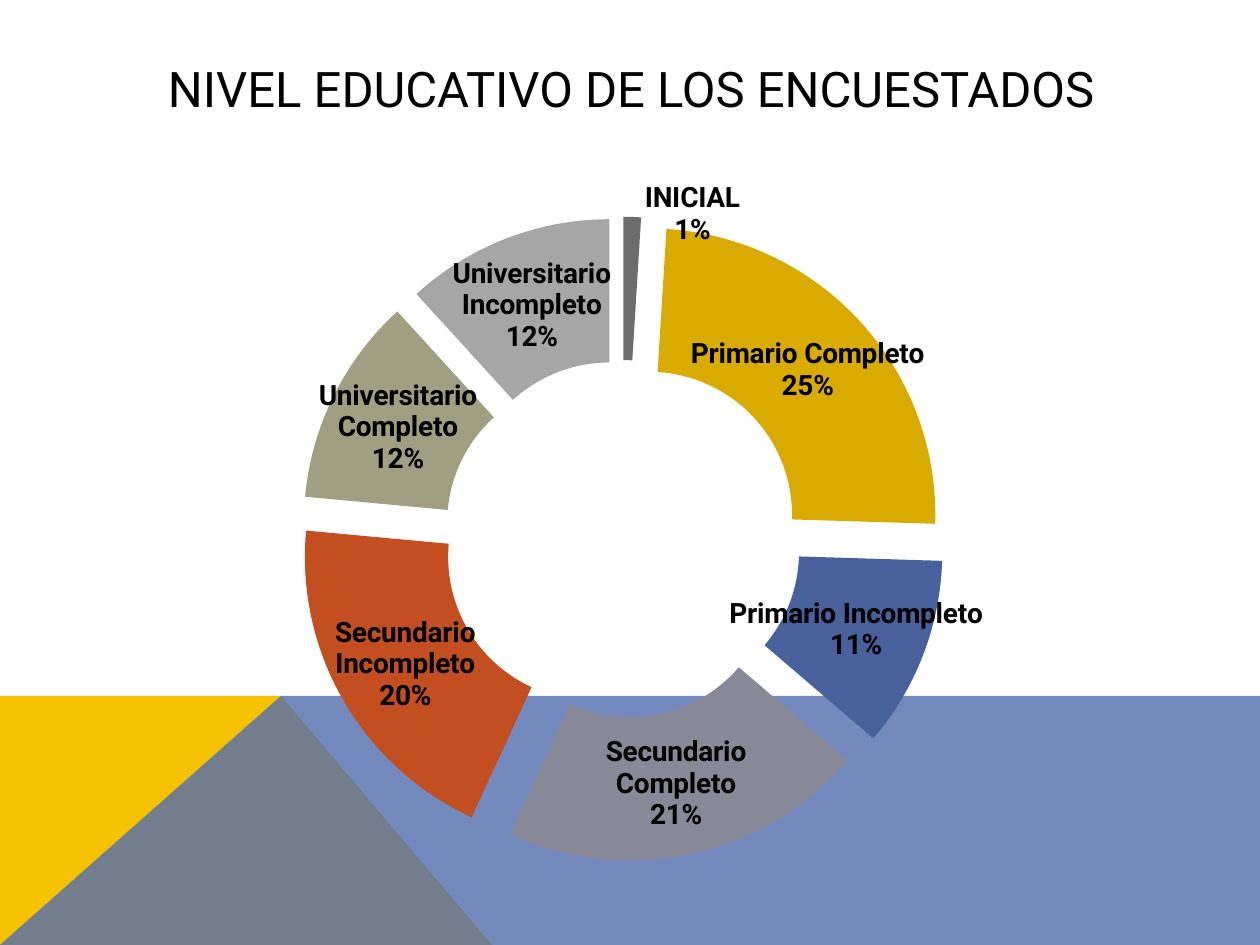
from typing import NamedTuple

import pptx
import pptx.chart.data
import pptx.dml.color
import pptx.enum.chart
import pptx.enum.text
import pptx.oxml
import pptx.oxml.ns
import pptx.util

RGBColor = pptx.dml.color.RGBColor

EMU_PER_PX = 914400 / 126
FONT = "Roboto"

BLACK = RGBColor(0x00, 0x00, 0x00)
YELLOW = RGBColor(0xF5, 0xC2, 0x01)
BLUE = RGBColor(0x52, 0x6D, 0xB0)
DARK_GRAY = RGBColor(0x6C, 0x6C, 0x6C)
GOLD = RGBColor(0xD9, 0xAB, 0x00)
DEEP_BLUE = RGBColor(0x48, 0x61, 0x9C)
SLATE = RGBColor(0x87, 0x88, 0x98)
ORANGE = RGBColor(0xC3, 0x4E, 0x1F)
OLIVE = RGBColor(0xA0, 0x9F, 0x81)
LIGHT_GRAY = RGBColor(0xA6, 0xA6, 0xA6)


class Band(NamedTuple):
    points: list[tuple[int, int]]
    color: RGBColor
    opacity: int


class Level(NamedTuple):
    name: str
    share: int
    color: RGBColor


BANDS = [
    Band([(0, 945), (0, 696), (281, 696), (492, 945)], YELLOW, 100),
    Band([(0, 945), (281, 696), (1260, 696), (1260, 945)], BLUE, 80),
]

LEVELS = [
    Level("INICIAL", 1, DARK_GRAY),
    Level("Primario Completo", 25, GOLD),
    Level("Primario Incompleto", 11, DEEP_BLUE),
    Level("Secundario Completo", 21, SLATE),
    Level("Secundario Incompleto", 20, ORANGE),
    Level("Universitario Completo", 12, OLIVE),
    Level("Universitario Incompleto", 12, LIGHT_GRAY),
]


def px(length: int) -> pptx.util.Emu:
    return pptx.util.Emu(round(length * EMU_PER_PX))


def chart_xml(content: str):
    """Parse one chart element, declaring the chart namespace on it."""
    tag, rest = content.split(">", 1)
    return pptx.oxml.parse_xml(f"{tag} {pptx.oxml.ns.nsdecls('c')}>{rest}")


def draw_band(slide, band: Band) -> None:
    builder = slide.shapes.build_freeform(*band.points[0], scale=EMU_PER_PX)
    builder.add_line_segments(band.points[1:], close=True)
    shape = builder.convert_to_shape()
    shape.shadow.inherit = False
    shape.fill.solid()
    shape.fill.fore_color.rgb = band.color
    shape.line.fill.background()
    if band.opacity < 100:
        color = shape.fill._xPr.find(".//" + pptx.oxml.ns.qn("a:srgbClr"))
        alpha = pptx.oxml.parse_xml(
            f'<a:alpha {pptx.oxml.ns.nsdecls("a")} val="{band.opacity * 1000}"/>'
        )
        color.append(alpha)


def draw_title(slide, text: str) -> None:
    title = slide.shapes.title
    title.left, title.top, title.width, title.height = map(px, (113, 50, 1036, 76))
    frame = title.text_frame
    frame.text = text
    frame.vertical_anchor = pptx.enum.text.MSO_ANCHOR.MIDDLE
    paragraph = frame.paragraphs[0]
    paragraph.alignment = pptx.enum.text.PP_ALIGN.CENTER
    paragraph.font.name = FONT
    paragraph.font.size = pptx.util.Pt(28)
    paragraph.font.color.rgb = BLACK


def set_label_font(font) -> None:
    font.name = FONT
    font.size = pptx.util.Pt(16)
    font.bold = True
    font.color.rgb = BLACK


def format_labels(series) -> None:
    labels = series.data_labels
    labels.show_value = False
    labels.show_category_name = True
    labels.show_percentage = True
    set_label_font(labels.font)

    # The thin first slice has its label moved up and to the right
    first = series.points[0].data_label
    set_label_font(first.font)
    element = labels._element
    label = element.find(pptx.oxml.ns.qn("c:dLbl"))
    label.find(pptx.oxml.ns.qn("c:idx")).addnext(chart_xml(
        '<c:layout><c:manualLayout><c:x val="0.05"/><c:y val="-0.1"/>'
        "</c:manualLayout></c:layout>"
    ))
    shown = {"showVal": 0, "showCatName": 1, "showPercent": 1, "showLegendKey": 0}
    for name, value in shown.items():
        label.find(pptx.oxml.ns.qn(f"c:{name}")).set("val", str(value))

    # Category and percentage stand on separate lines
    for parent in (label, element):
        last_flag = parent.find(pptx.oxml.ns.qn("c:showBubbleSize"))
        if last_flag is None:
            last_flag = parent.find(pptx.oxml.ns.qn("c:showPercent"))
        last_flag.addnext(chart_xml("<c:separator>\n</c:separator>"))


def draw_chart(slide, levels: list[Level]) -> None:
    data = pptx.chart.data.CategoryChartData()
    data.categories = [level.name for level in levels]
    data.add_series("Series 1", [level.share for level in levels])
    chart = slide.shapes.add_chart(
        pptx.enum.chart.XL_CHART_TYPE.DOUGHNUT_EXPLODED,
        *map(px, (0, 165, 1245, 741)), data,
    ).chart
    chart.has_legend = False
    chart.has_title = False
    chart.font.name = FONT
    chart.font.size = pptx.util.Pt(10)
    chart.font.color.rgb = BLACK

    plot = chart.plots[0]
    plot.vary_by_categories = True
    series = plot.series[0]
    for index, level in enumerate(levels):
        point_format = series.points[index].format
        point_format.fill.solid()
        point_format.fill.fore_color.rgb = level.color
        point_format.line.fill.background()
    format_labels(series)

    # Fixed place for the ring
    plot_area = plot._element.getparent()
    for layout in plot_area.findall(pptx.oxml.ns.qn("c:layout")):
        plot_area.remove(layout)
    plot_area.insert(0, chart_xml(
        '<c:layout><c:manualLayout><c:layoutTarget val="inner"/>'
        '<c:xMode val="edge"/><c:yMode val="edge"/><c:x val="0.24"/>'
        '<c:y val="0.07"/><c:w val="0.52"/><c:h val="0.87"/>'
        "</c:manualLayout></c:layout>"
    ))


def main() -> None:
    presentation = pptx.Presentation()
    presentation.slide_width = px(1260)
    presentation.slide_height = px(945)
    slide = presentation.slides.add_slide(presentation.slide_layouts[5])

    # Coloured bands along the bottom
    for band in BANDS:
        draw_band(slide, band)

    # Title and ring chart
    draw_title(slide, "NIVEL EDUCATIVO DE LOS ENCUESTADOS")
    draw_chart(slide, LEVELS)
    presentation.save("out.pptx")


if __name__ == "__main__":
    main()
